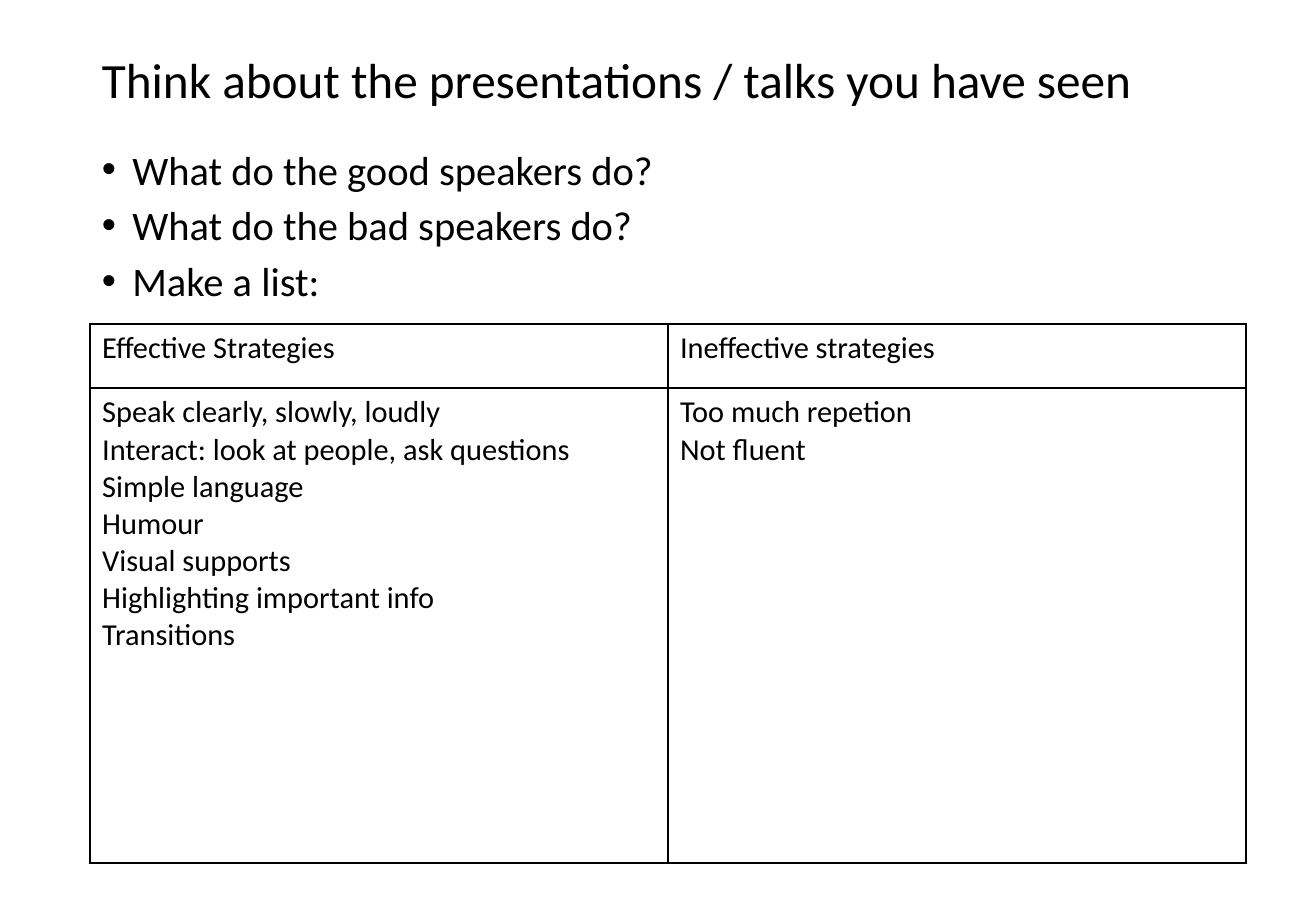
import pptx
import pptx.dml.color
import pptx.enum.text
import pptx.oxml.ns
import pptx.util
from lxml import etree

EMU_PER_PX = 7526
LEFT = 90
TEXT_WIDTH = 1135


def px(length):
    return pptx.util.Emu(length * EMU_PER_PX)


def color(hex_code):
    return pptx.dml.color.RGBColor.from_string(hex_code)


def add_element(parent, tag, **attributes):
    return etree.SubElement(parent, pptx.oxml.ns.qn(tag), attributes)


class SlideBuilder:
    font_name = "Calibri"
    ink = "000000"

    def __init__(self, slide):
        self.slide = slide

    def add_lines(self, frame, lines, size, line_spacing=1.0, space_before=0, bullet=False):
        """Put one paragraph per line into a text frame."""
        for index, line in enumerate(lines):
            paragraph = frame.add_paragraph() if index else frame.paragraphs[0]
            paragraph.line_spacing = line_spacing
            paragraph.space_before = pptx.util.Pt(space_before if index else 0)
            if bullet:
                self.add_bullet(paragraph)
            run = paragraph.add_run()
            run.text = line
            run.font.name = self.font_name
            run.font.size = pptx.util.Pt(size)
            run.font.color.rgb = color(self.ink)

    def add_bullet(self, paragraph):
        properties = paragraph._p.get_or_add_pPr()
        indent = pptx.util.Inches(0.25)
        properties.set("marL", str(indent))
        properties.set("indent", str(-indent))
        add_element(properties, "a:buFont", typeface="Arial")
        add_element(properties, "a:buChar", char="•")

    def text(self, left, top, width, height, lines, size, anchor, **paragraph_style):
        box = self.slide.shapes.add_textbox(px(left), px(top), px(width), px(height))
        frame = box.text_frame
        frame.word_wrap = True
        frame.vertical_anchor = anchor
        self.add_lines(frame, lines, size, **paragraph_style)

    def table(self, left, top, column_width, row_heights, rows, size):
        columns = len(rows[0])
        table = self.slide.shapes.add_table(
            len(rows), columns, px(left), px(top),
            px(column_width * columns), px(sum(row_heights))).table
        table.first_row = False
        table.horz_banding = False
        for column in table.columns:
            column.width = px(column_width)
        for row, height, contents in zip(table.rows, row_heights, rows):
            row.height = px(height)
            for cell, lines in zip(row.cells, contents):
                self.add_borders(cell)
                cell.fill.background()
                self.add_lines(cell.text_frame, lines, size)

    def add_borders(self, cell):
        properties = cell._tc.get_or_add_tcPr()
        for side in ("L", "R", "T", "B"):
            line = add_element(properties, f"a:ln{side}", w=str(pptx.util.Pt(1)))
            fill = add_element(line, "a:solidFill")
            add_element(fill, "a:srgbClr", val=self.ink)


def main():
    presentation = pptx.Presentation()
    presentation.slide_width = px(1316)
    presentation.slide_height = px(911)
    builder = SlideBuilder(presentation.slides.add_slide(presentation.slide_layouts[6]))
    anchors = pptx.enum.text.MSO_ANCHOR

    builder.text(LEFT, 49, TEXT_WIDTH, 67,
                 ["Think about the presentations / talks you have seen"],
                 29.2, anchors.MIDDLE, line_spacing=0.9)

    questions = ["What do the good speakers do?",
                 "What do the bad speakers do?",
                 "Make a list:"]
    builder.text(LEFT, 148, TEXT_WIDTH, 176, questions, 24, anchors.TOP,
                 line_spacing=0.8, space_before=10, bullet=True)

    effective = ["Speak clearly, slowly, loudly",
                 "Interact: look at people, ask questions",
                 "Simple language",
                 "Humour",
                 "Visual supports",
                 "Highlighting important info",
                 "Transitions"]
    ineffective = ["Too much repetion", "Not fluent"]
    strategies = [[["Effective Strategies"], ["Ineffective strategies"]],
                  [effective, ineffective]]
    builder.table(LEFT, 324, 578, [64, 475], strategies, 18)

    presentation.save("out.pptx")


if __name__ == "__main__":
    main()
